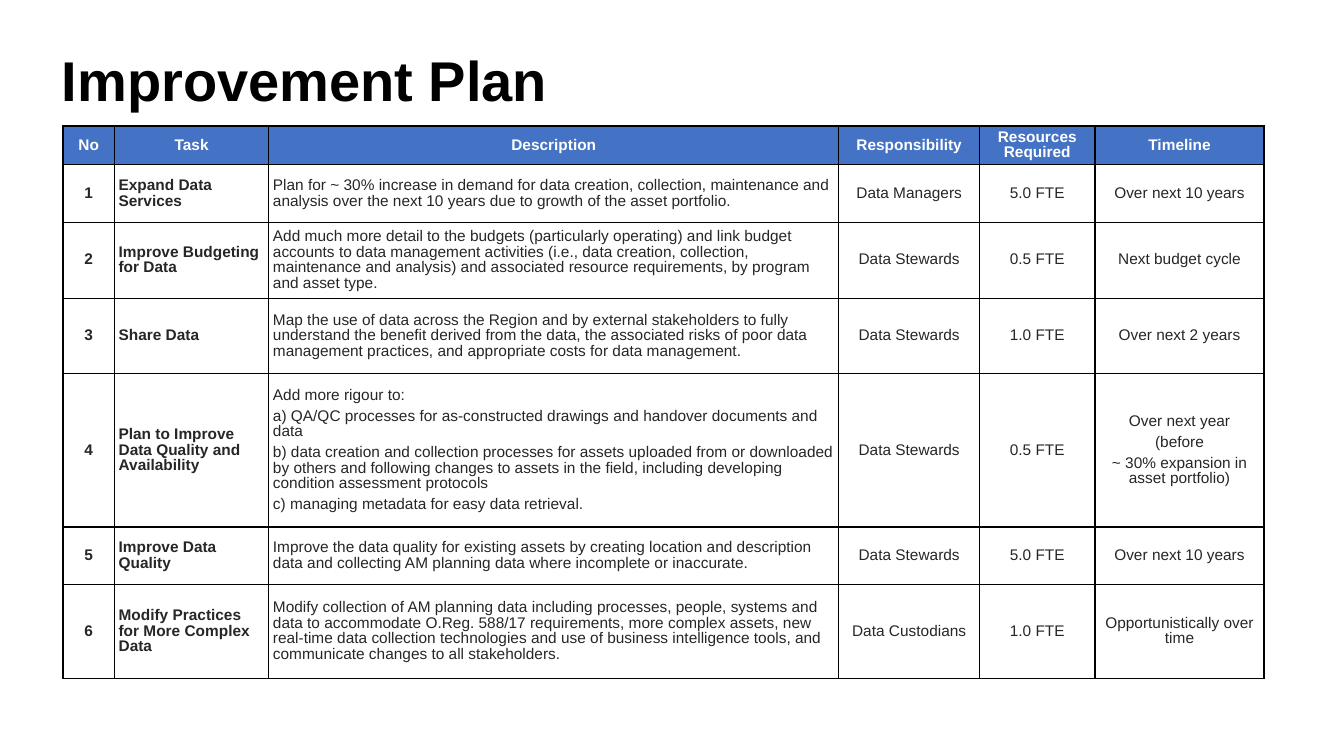
from lxml import etree
from pptx import Presentation
from pptx.dml.color import RGBColor
from pptx.enum.text import MSO_ANCHOR, MSO_AUTO_SIZE, PP_ALIGN
from pptx.oxml.ns import qn
from pptx.util import Pt

LEFT, CENTER = PP_ALIGN.LEFT, PP_ALIGN.CENTER
MIDDLE = MSO_ANCHOR.MIDDLE
NO_FIT = MSO_AUTO_SIZE.NONE
PX = 9525
BLACK, WHITE, INK, BLUE = "000000", "FFFFFF", "262626", "4472C4"

COLS = [49, 147, 543, 134, 110, 161]
ROWS = [37, 55, 72, 72, 146, 55, 89]
HEADS = ["No", "Task", "Description", "Responsibility",
         "Resources Required", "Timeline"]
# Each task: name, description, role, effort, timeline
TASKS = [
    ("Expand Data Services",
     "Plan for ~ 30% increase in demand for data creation, collection, "
     "maintenance and analysis over the next 10 years due to growth of the "
     "asset portfolio.",
     "Data Managers", "5.0 FTE", "Over next 10 years"),
    ("Improve Budgeting for Data",
     "Add much more detail to the budgets (particularly operating) and link "
     "budget accounts to data management activities (i.e., data creation, "
     "collection, maintenance and analysis) and associated resource "
     "requirements, by program and asset type.",
     "Data Stewards", "0.5 FTE", "Next budget cycle"),
    ("Share Data",
     "Map the use of data across the Region and by external stakeholders to "
     "fully understand the benefit derived from the data, the associated "
     "risks of poor data management practices, and appropriate costs for "
     "data management.",
     "Data Stewards", "1.0 FTE", "Over next 2 years"),
    ("Plan to Improve Data Quality and Availability",
     "Add more rigour to:\n"
     "a) QA/QC processes for as-constructed drawings and handover documents "
     "and data\n"
     "b) data creation and collection processes for assets uploaded from or "
     "downloaded by others and following changes to assets in the field, "
     "including developing condition assessment protocols\n"
     "c) managing metadata for easy data retrieval.",
     "Data Stewards", "0.5 FTE",
     "Over next year\n(before\n~ 30% expansion in asset portfolio)"),
    ("Improve Data Quality",
     "Improve the data quality for existing assets by creating location and "
     "description data and collecting AM planning data where incomplete or "
     "inaccurate.",
     "Data Stewards", "5.0 FTE", "Over next 10 years"),
    ("Modify Practices for More Complex Data",
     "Modify collection of AM planning data including processes, people, "
     "systems and data to accommodate O.Reg. 588/17 requirements, more "
     "complex assets, new real-time data collection technologies and use of "
     "business intelligence tools, and communicate changes to all "
     "stakeholders.",
     "Data Custodians", "1.0 FTE", "Opportunistically over time"),
]


def rgb(code):
    return RGBColor.from_string(code)


def style(para, size, color, bold, align, before, after):
    para.alignment = align
    para.line_spacing = 0.9
    para.space_before, para.space_after = Pt(before), Pt(after)
    font = para.font
    font.name, font.size, font.bold = "Arial", Pt(size), bold
    font.color.rgb = rgb(color)


def add_title(slide, x, y, w, h):
    title = slide.shapes.title
    title.left, title.top = x * PX, y * PX
    title.width, title.height = w * PX, h * PX
    frame = title.text_frame
    frame.text = "Improvement Plan"
    frame.word_wrap, frame.auto_size = True, NO_FIT
    frame.vertical_anchor = MIDDLE
    frame.margin_left = frame.margin_right = 12 * PX
    frame.margin_top = frame.margin_bottom = 7 * PX
    style(frame.paragraphs[0], 40, BLACK, True, LEFT, 0, 8)


def add_edges(cell):
    """Draw a thin black line on all four sides of the cell."""
    props = cell._tc.get_or_add_tcPr()
    for i, side in enumerate(("a:lnL", "a:lnR", "a:lnT", "a:lnB")):
        line = etree.Element(qn(side), w=str(Pt(1)))
        fill = etree.SubElement(line, qn("a:solidFill"))
        etree.SubElement(fill, qn("a:srgbClr"), val=BLACK)
        props.insert(i, line)


def fill_cell(cell, text, head, col):
    cell.text = text
    cell.vertical_anchor = MIDDLE
    cell.margin_left = cell.margin_right = 4 * PX
    cell.margin_top = cell.margin_bottom = PX
    if head:
        cell.fill.solid()
        cell.fill.fore_color.rgb = rgb(BLUE)
    else:
        cell.fill.background()
    add_edges(cell)
    align = LEFT if col in (1, 2) and not head else CENTER
    for para in cell.text_frame.paragraphs:
        style(para, 11, WHITE if head else INK, head or col < 2, align, 2, 2)


def add_plan(slide, x, y):
    data = [HEADS] + [(str(n), *task) for n, task in enumerate(TASKS, 1)]
    table = slide.shapes.add_table(
        len(ROWS), len(COLS), x * PX, y * PX,
        sum(COLS) * PX, sum(ROWS) * PX).table
    table.horz_banding = False
    for col, width in zip(table.columns, COLS):
        col.width = width * PX
    for r, (height, texts) in enumerate(zip(ROWS, data)):
        table.rows[r].height = height * PX
        for c, text in enumerate(texts):
            fill_cell(table.cell(r, c), text, r == 0, c)


def main():
    deck = Presentation()
    deck.slide_width, deck.slide_height = 1280 * PX, 720 * PX
    slide = deck.slides.add_slide(deck.slide_layouts[5])
    add_title(slide, 47, 10, 1116, 139)
    add_plan(slide, 60, 120)
    deck.save("out.pptx")


if __name__ == "__main__":
    main()
